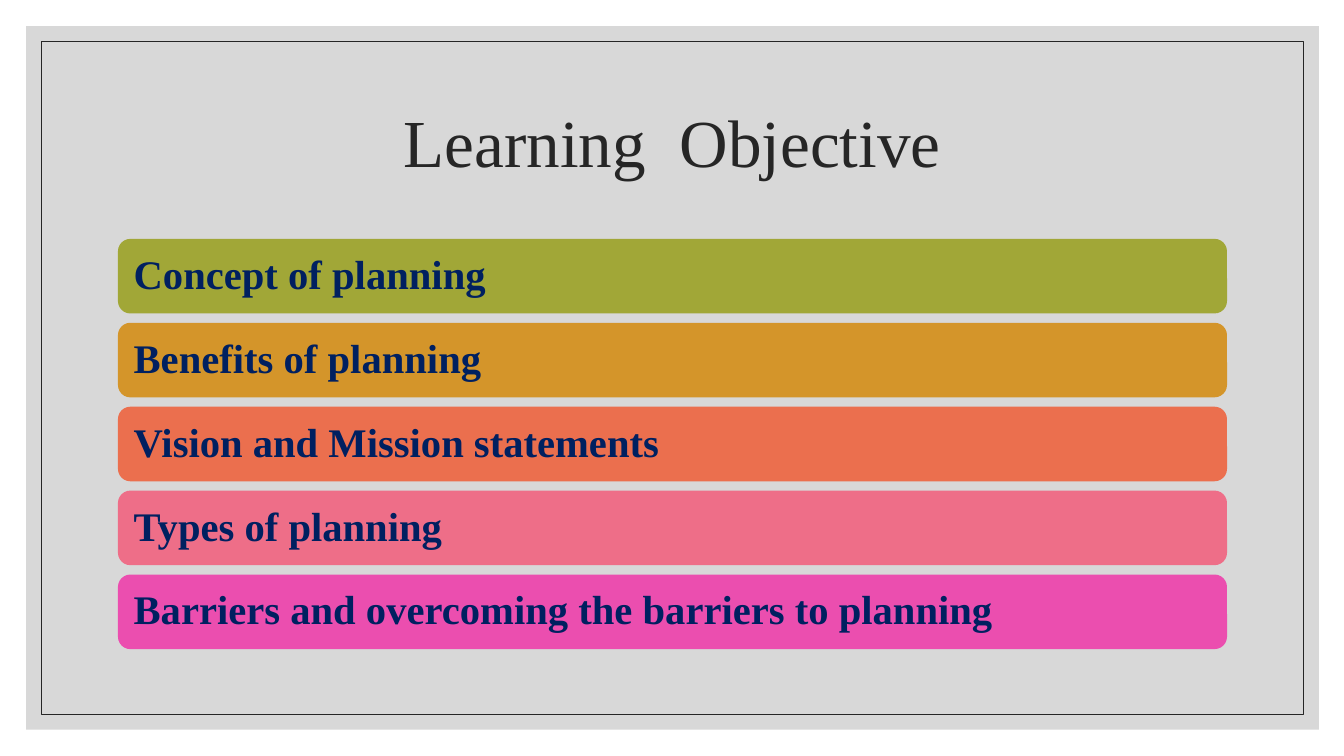
from lxml import etree
from pptx import Presentation
from pptx.dml.color import RGBColor
from pptx.enum.shapes import MSO_SHAPE
from pptx.enum.text import MSO_ANCHOR, PP_ALIGN
from pptx.oxml.ns import qn
from pptx.util import Inches, Pt

FRAME_GREY = RGBColor(0xBF, 0xBF, 0xBF)
INK = RGBColor(0x26, 0x26, 0x26)
NAVY = RGBColor(0x00, 0x20, 0x60)
OLIVE = RGBColor(0xA1, 0xA7, 0x37)
AMBER = RGBColor(0xD4, 0x95, 0x2A)
CORAL = RGBColor(0xEB, 0x6F, 0x4E)
ROSE = RGBColor(0xEE, 0x6E, 0x88)
MAGENTA = RGBColor(0xEB, 0x4E, 0xAF)

OBJECTIVES = [
    ("Concept of planning", OLIVE),
    ("Benefits of planning", AMBER),
    ("Vision and Mission statements", CORAL),
    ("Types of planning", ROSE),
    ("Barriers and overcoming the barriers to planning", MAGENTA),
]
CONTENT_LEFT, CONTENT_WIDTH = 1.17, 11
FIRST_BAR_TOP, LAST_BAR_TOP, BAR_HEIGHT = 2.37, 5.7, 0.74


def write_text(shape, text, *, size, color, font, bold=False,
               align=PP_ALIGN.LEFT, inset=None):
    frame = shape.text_frame
    frame.word_wrap = True
    frame.vertical_anchor = MSO_ANCHOR.MIDDLE
    if inset is not None:
        frame.margin_left = frame.margin_right = Inches(inset)
        frame.margin_top = frame.margin_bottom = Inches(inset)
    paragraph = frame.paragraphs[0]
    paragraph.alignment = align
    paragraph.line_spacing = 0.9
    run = paragraph.add_run()
    run.text = text
    run.font.name = font
    run.font.size = Pt(size)
    run.font.bold = bold
    run.font.color.rgb = color


class SlideBuilder:
    """Holds the slide and its typeface."""

    def __init__(self, slide, font):
        self.slide = slide
        self.font = font

    def box(self, kind, left, top, width, height, *, fill=None, opacity=None,
            line=None):
        shape = self.slide.shapes.add_shape(
            kind, Inches(left), Inches(top), Inches(width), Inches(height))
        shape.shadow.inherit = False
        if fill is None:
            shape.fill.background()
        else:
            shape.fill.solid()
            shape.fill.fore_color.rgb = fill
        if opacity is not None:
            color = shape.fill._xPr.find(".//" + qn("a:srgbClr"))
            etree.SubElement(color, qn("a:alpha"), val=str(opacity * 1000))
        if line is None:
            shape.line.fill.background()
        else:
            shape.line.color.rgb = line
            shape.line.width = Pt(0.5)
        return shape

    def title(self, text, left, top, width, height):
        shape = self.slide.shapes.add_textbox(
            Inches(left), Inches(top), Inches(width), Inches(height))
        write_text(shape, text, size=48, color=INK, font=self.font,
                   align=PP_ALIGN.CENTER)

    def bar(self, text, top, fill):
        shape = self.box(MSO_SHAPE.ROUNDED_RECTANGLE, CONTENT_LEFT, top,
                         CONTENT_WIDTH, BAR_HEIGHT, fill=fill)
        write_text(shape, text, size=29, color=NAVY, font=self.font,
                   bold=True, inset=0.12)


def main():
    presentation = Presentation()
    presentation.slide_width = Inches(13.33)
    presentation.slide_height = Inches(7.5)
    slide = presentation.slides.add_slide(presentation.slide_layouts[6])
    builder = SlideBuilder(slide, "Times New Roman")

    # Background panel and thin frame
    builder.box(MSO_SHAPE.RECTANGLE, 0.26, 0.26, 12.82, 6.98,
                fill=FRAME_GREY, opacity=60)
    builder.box(MSO_SHAPE.RECTANGLE, 0.41, 0.41, 12.52, 6.68, line=INK)

    # Title
    builder.title("Learning  Objective", CONTENT_LEFT, 0.7, CONTENT_WIDTH, 1.5)

    # Evenly spaced objective bars
    pitch = (LAST_BAR_TOP - FIRST_BAR_TOP) / (len(OBJECTIVES) - 1)
    for index, (text, fill) in enumerate(OBJECTIVES):
        builder.bar(text, FIRST_BAR_TOP + index * pitch, fill)

    presentation.save("out.pptx")


if __name__ == "__main__":
    main()
